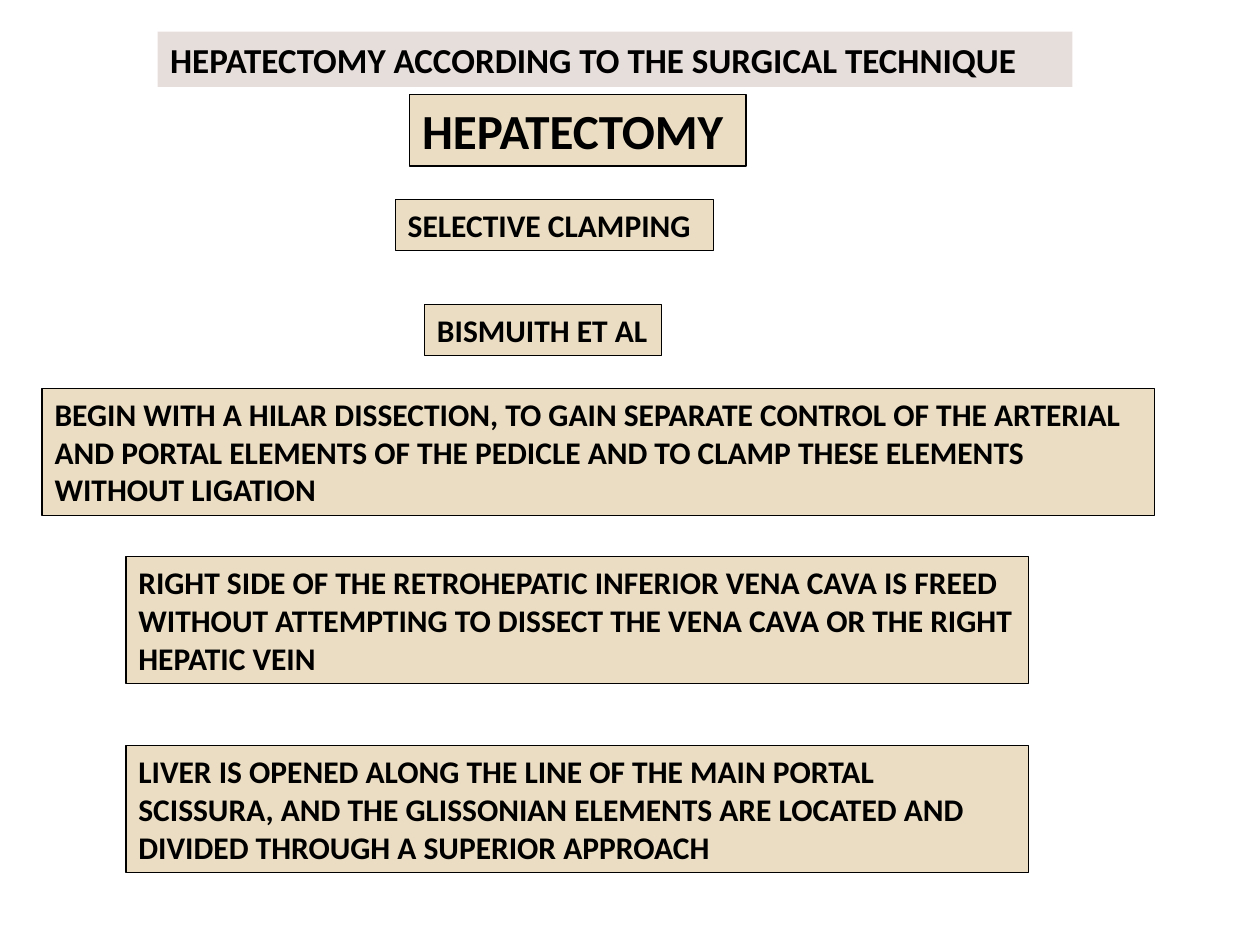
import pptx
import pptx.dml.color
import pptx.enum.shapes
import pptx.enum.text
import pptx.util
from pptx.util import Cm

BLACK = pptx.dml.color.RGBColor(0x00, 0x00, 0x00)
SAND = pptx.dml.color.RGBColor(0xEB, 0xDD, 0xC3)
ROSE = pptx.dml.color.RGBColor(0xE6, 0xDE, 0xDB)


def write(s, text, size, wrap=True):
    tf = s.text_frame
    frame_format = {
        "word_wrap": wrap,
        "auto_size": pptx.enum.text.MSO_AUTO_SIZE.NONE,
        "vertical_anchor": pptx.enum.text.MSO_ANCHOR.TOP,
        "margin_left": Cm(0.25),
        "margin_right": Cm(0.25),
        "margin_top": Cm(0.13),
        "margin_bottom": Cm(0.13),
    }
    for name, value in frame_format.items():
        setattr(tf, name, value)
    p = tf.paragraphs[0]
    p.alignment = pptx.enum.text.PP_ALIGN.LEFT
    r = p.add_run()
    r.text = text
    font_format = {"name": "Calibri", "size": pptx.util.Pt(size), "bold": True}
    for name, value in font_format.items():
        setattr(r.font, name, value)
    r.font.color.rgb = BLACK


prs = pptx.Presentation()
prs.slide_width = Cm(25.4)
prs.slide_height = Cm(19.05)
slide = prs.slides.add_slide(prs.slide_layouts[5])

title = slide.shapes.title
title_place = {"left": 3.18, "top": 0.64, "width": 18.44, "height": 1.11}
for name, value in title_place.items():
    setattr(title, name, Cm(value))
title.fill.solid()
title.fill.fore_color.rgb = ROSE
write(title, "HEPATECTOMY ACCORDING TO THE SURGICAL TECHNIQUE", 20)

# left, top, width, height in cm, then text size, wrapping and text
steps = [
    (8.26, 1.9, 6.78, 1.45, 28, True, "HEPATECTOMY"),
    (7.97, 4.02, 6.41, 1.03, 18, True, "SELECTIVE CLAMPING"),
    (8.56, 6.14, 4.78, 1.03, 18, False, "BISMUITH ET AL"),
    (0.85, 7.83, 22.43, 2.56, 18, True,
     "BEGIN WITH A HILAR DISSECTION, TO GAIN SEPARATE CONTROL OF THE ARTERIAL "
     "AND PORTAL ELEMENTS OF THE PEDICLE AND TO CLAMP THESE ELEMENTS "
     "WITHOUT LIGATION"),
    (2.54, 11.22, 18.2, 2.56, 18, True,
     "RIGHT SIDE OF THE RETROHEPATIC INFERIOR VENA CAVA IS FREED "
     "WITHOUT ATTEMPTING TO DISSECT THE VENA CAVA OR THE RIGHT HEPATIC VEIN"),
    (2.54, 15.03, 18.2, 2.56, 18, True,
     "LIVER IS OPENED ALONG THE LINE OF THE MAIN PORTAL SCISSURA, AND THE "
     "GLISSONIAN ELEMENTS ARE LOCATED AND DIVIDED THROUGH A SUPERIOR APPROACH"),
]

for left, top, width, height, size, wrap, text in steps:
    s = slide.shapes.add_shape(
        pptx.enum.shapes.MSO_SHAPE.RECTANGLE,
        Cm(left), Cm(top), Cm(width), Cm(height))
    s.shadow.inherit = False
    s.fill.solid()
    s.fill.fore_color.rgb = SAND
    s.line.color.rgb = BLACK
    s.line.width = pptx.util.Pt(0.75)
    write(s, text, size, wrap)

prs.save("out.pptx")
